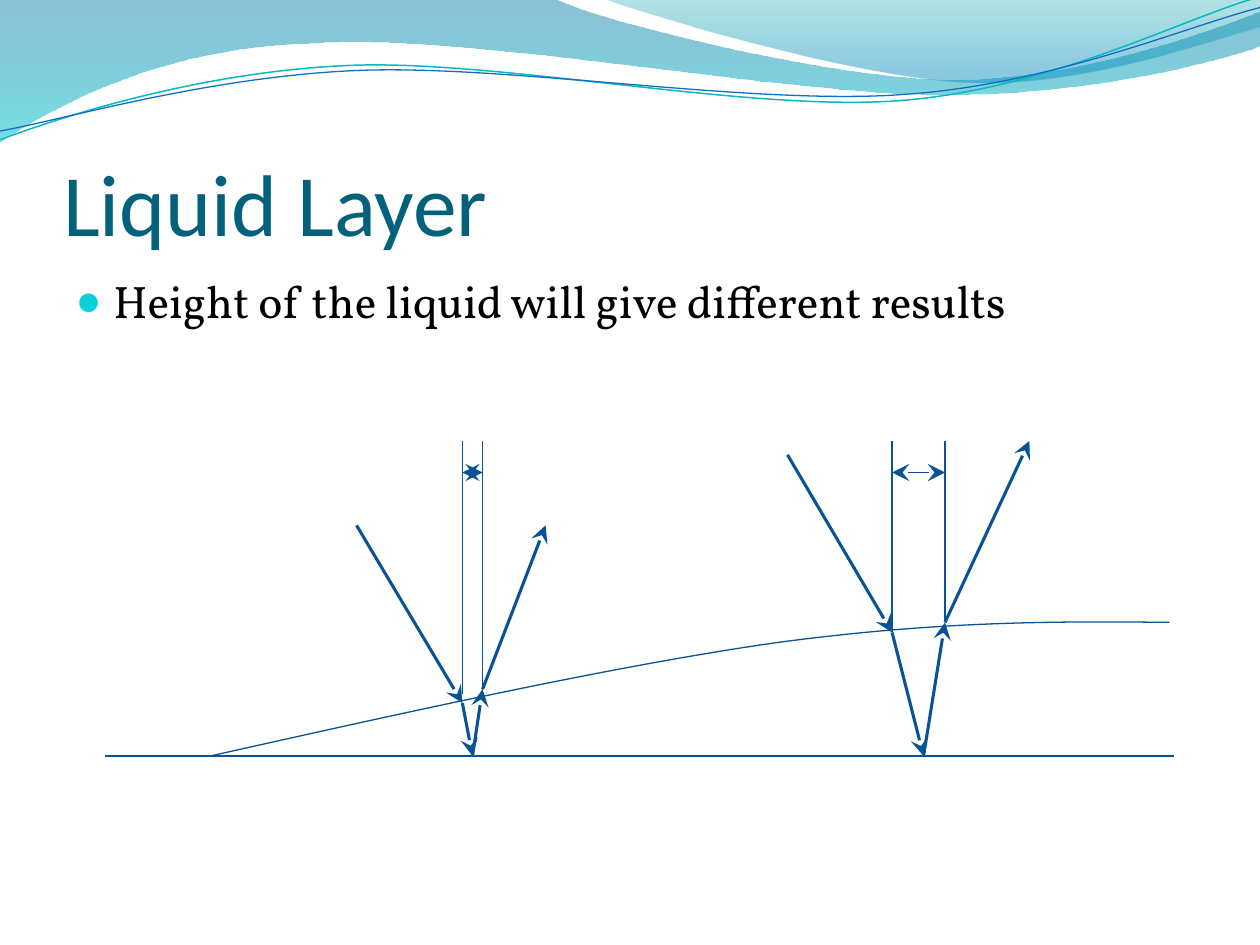
from pptx import Presentation
from pptx.dml.color import RGBColor
from pptx.enum.shapes import MSO_CONNECTOR
from pptx.enum.text import MSO_ANCHOR, PP_ALIGN
from pptx.oxml.ns import qn
from pptx.util import Inches, Pt
from lxml import etree

STRAIGHT = MSO_CONNECTOR.STRAIGHT
BOTTOM, LEFT = MSO_ANCHOR.BOTTOM, PP_ALIGN.LEFT

THEME = {
    "title": ("Calibri", 50, "04617B"),
    "body": ("Vollkorn", 26, "000000"),
    "bullet": "0BD0D9",
    "ink": "095295",
    "thin": 0.75,
    "ray": 1.75,
}

TITLE = "Liquid Layer"
BULLETS = ["Height of the liquid will give different results"]

# Two numbers are a straight step, six numbers a Bezier step.
WAVES = [
    ([(0, 0), (4.4, -0.01), (4.76, 0.17, 6.64, 0.63, 7.58, 0.63),
      (8.53, 0.63, 9.58, 0.26, 10, 0.09), (10.01, 0.36),
      (9.83, 0.44, 8.7, 0.76, 7.46, 0.75), (6.22, 0.75, 3.82, 0.28, 2.57, 0.34),
      (1.29, 0.36, 0.46, 0.83, -0.01, 1.13)],
     [(0, "0074A1", 45), (1, "00C6CF", 55)]),
    ([(4.79, -0.01), (5.09, 0.11, 6.82, 0.62, 7.69, 0.65),
      (8.56, 0.69, 9.61, 0.32, 10, 0.21), (10, 0)],
     [(0, "00A1A9", 30), (0.8, "008BBF", 45)]),
]
WAVE_LINES = [
    ([(0, 1.11), (0.48, 0.93, 1.58, 0.57, 2.77, 0.52),
      (3.95, 0.47, 5.93, 0.89, 7.13, 0.8), (8.33, 0.71, 9.38, 0.15, 9.98, -0.02)],
     "0AB8BF", 0.85),
    ([(0, 1.04), (0.47, 0.96, 1.64, 0.61, 2.83, 0.56),
      (4.03, 0.51, 5.97, 0.84, 7.17, 0.75), (8.36, 0.67, 9.41, 0.21, 10, 0.06)],
     "0F6FC6", 0.75),
]

FLOOR = 6
FLOOR_SPAN = (9.32, 0.83)
SURFACE = [(1.67, FLOOR), (3.28, 5.64, 4.9, 5.28, 6.17, 5.1),
           (7.44, 4.93, 8.36, 4.93, 9.28, 4.94)]
GUIDE_TOP, GAP_Y = 3.5, 3.75
RAYS = [
    {"path": [(2.83, 4.17), (3.67, 5.58), (3.75, FLOOR), (3.83, 5.47), (4.33, 4.17)],
     "guide_ends": (5.51, 5.51)},
    {"path": [(6.25, 3.61), (7.08, 5.02), (7.33, FLOOR), (7.5, 4.94), (8.17, 3.5)],
     "guide_ends": (5.02, 4.94)},
]


def rgb(value):
    return RGBColor.from_string(value)


def add_free(s, steps, close=False):
    points = [(Inches(x), Inches(y))
              for step in steps for x, y in zip(step[::2], step[1::2])]
    builder = s.shapes.build_freeform(*points[0])
    builder.add_line_segments(points[1:], close=close)
    sp = builder.convert_to_shape()
    sp.shadow.inherit = False
    segments = iter(list(sp._element.iter(qn("a:lnTo"))))
    for step in steps[1:]:
        first = next(segments)
        if len(step) == 6:
            curve = etree.Element(qn("a:cubicBezTo"))
            first.addprevious(curve)
            for segment in (first, next(segments), next(segments)):
                curve.append(segment[0])
                segment.getparent().remove(segment)
    return sp


def add_curve(s, steps, color, width):
    sp = add_free(s, steps)
    sp.fill.background()
    sp.line.color.rgb = rgb(color)
    sp.line.width = Pt(width)
    return sp


def add_wave(s, steps, stops):
    sp = add_free(s, steps, close=True)
    sp.line.fill.background()
    sp.fill.gradient()
    sp.fill.gradient_angle = 270
    for stop, (position, color, _) in zip(sp.fill.gradient_stops, stops):
        stop.position = position
        stop.color.rgb = rgb(color)
    colors = sp._element.spPr.iter(qn("a:srgbClr"))
    for node, (_, _, opacity) in zip(colors, stops):
        etree.SubElement(node, qn("a:alpha"), val=str(opacity * 1000))
    return sp


def add_line(s, start, end, width=THEME["thin"], arrows=()):
    sp = s.shapes.add_connector(STRAIGHT, *map(Inches, (*start, *end)))
    sp.line.color.rgb = rgb(THEME["ink"])
    sp.line.width = Pt(width)
    for tag in arrows:
        etree.SubElement(sp.line._get_or_add_ln(), qn(tag),
                         type="stealth", w="lg", len="lg")
    etree.SubElement(sp._element.spPr, qn("a:effectLst"))


def place(sp, left, top, width, height):
    sp.left, sp.top, sp.width, sp.height = map(Inches, (left, top, width, height))


def style(p, role):
    name, size, color = THEME[role]
    p.alignment = LEFT
    for r in p.runs:
        r.font.name, r.font.size = name, Pt(size)
        r.font.color.rgb = rgb(color)


def add_bullet(p):
    pPr = p._p.get_or_add_pPr()
    pPr.set("marL", str(Inches(0.3)))
    pPr.set("indent", str(-Inches(0.3)))
    color = etree.SubElement(pPr, qn("a:buClr"))
    etree.SubElement(color, qn("a:srgbClr"), val=THEME["bullet"])
    etree.SubElement(pPr, qn("a:buSzPct"), val="95000")
    etree.SubElement(pPr, qn("a:buFont"), typeface="Arial")
    etree.SubElement(pPr, qn("a:buChar"), char="●")


def add_text(s):
    title, body = s.shapes.title, s.placeholders[1]
    place(title, 0.5, 0.77, 9, 1.25)
    tf = title.text_frame
    tf.text = TITLE
    tf.vertical_anchor = BOTTOM
    tf.margin_left = tf.margin_right = tf.margin_bottom = 0
    style(tf.paragraphs[0], "title")

    place(body, 0.5, 2.12, 9, 4.8)
    body.text_frame.text = "\n".join(BULLETS)
    for p in body.text_frame.paragraphs:
        style(p, "body")
        add_bullet(p)


def add_backdrop(s):
    shapes = [add_wave(s, *wave) for wave in WAVES]
    shapes += [add_curve(s, *line) for line in WAVE_LINES]
    master = s.slide_layout.slide_master
    for i, sp in enumerate(shapes):
        master.shapes._spTree.insert(2 + i, sp._element)


def add_diagram(s):
    right, left = FLOOR_SPAN
    add_line(s, (right, FLOOR), (left, FLOOR))
    add_curve(s, SURFACE, THEME["ink"], THEME["thin"])
    for ray in RAYS:
        path = ray["path"]
        for start, end in zip(path, path[1:]):
            add_line(s, start, end, THEME["ray"], ["a:tailEnd"])
    for ray in RAYS:
        entry, leave = ray["path"][1][0], ray["path"][3][0]
        for x, y in zip((entry, leave), ray["guide_ends"]):
            add_line(s, (x, y), (x, GUIDE_TOP))
        add_line(s, (entry, GAP_Y), (leave, GAP_Y), arrows=["a:headEnd", "a:tailEnd"])


def main():
    prs = Presentation()
    prs.slide_width, prs.slide_height = Inches(10), Inches(7.5)
    s = prs.slides.add_slide(prs.slide_layouts[1])
    add_text(s)
    add_backdrop(s)
    add_diagram(s)
    prs.save("out.pptx")


if __name__ == "__main__":
    main()
